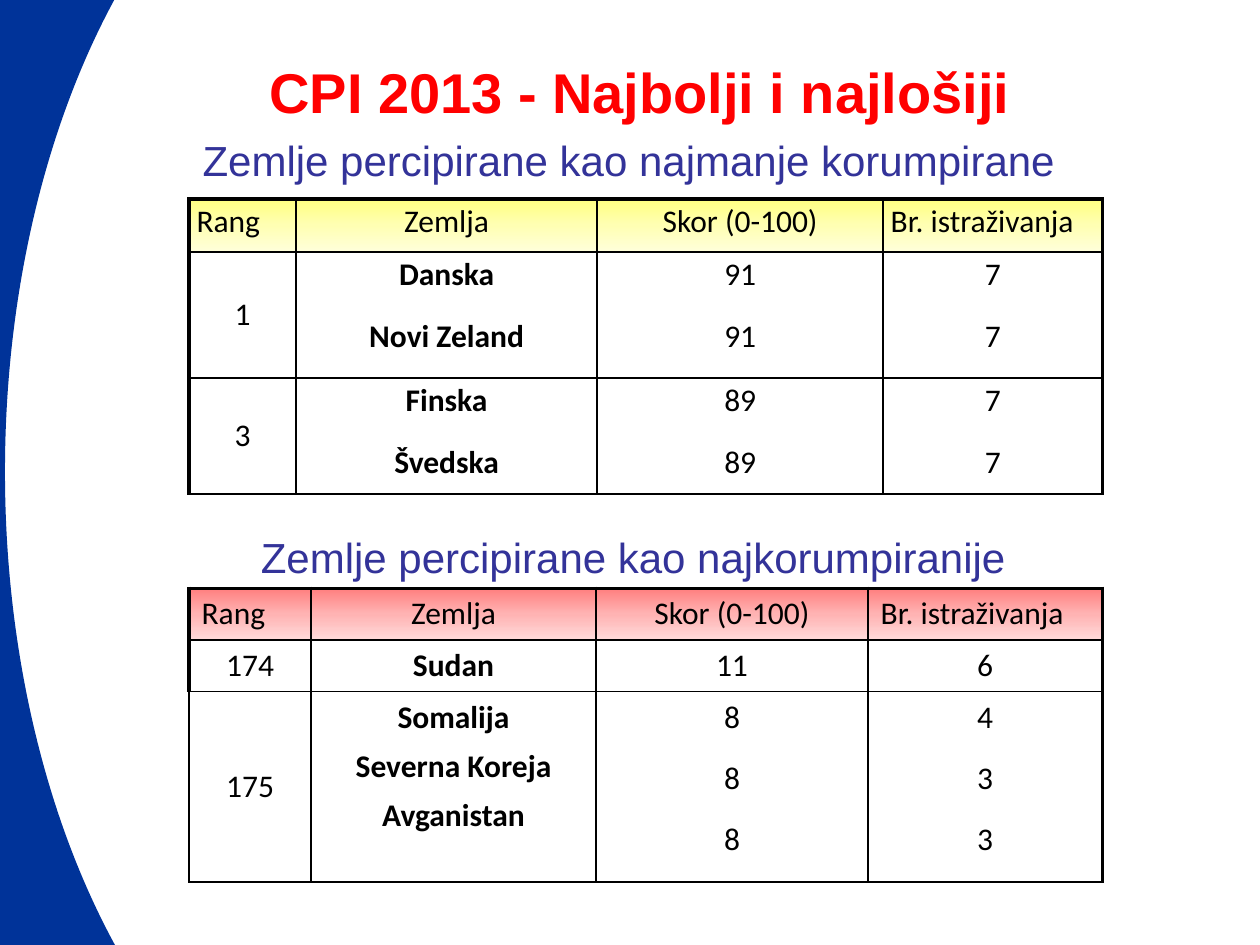
from copy import deepcopy
from dataclasses import dataclass

from pptx import Presentation
from pptx.dml.color import RGBColor
from pptx.enum.shapes import MSO_SHAPE
from pptx.enum.text import MSO_ANCHOR, PP_ALIGN
from pptx.oxml import parse_xml
from pptx.oxml.ns import nsdecls, qn
from pptx.util import Inches, Pt

MOON = MSO_SHAPE.MOON
LEFT, CENTER = PP_ALIGN.LEFT, PP_ALIGN.CENTER
TOP, MIDDLE = MSO_ANCHOR.TOP, MSO_ANCHOR.MIDDLE


@dataclass(frozen=True)
class Theme:
    """Colours, fonts and point sizes of the slide."""
    blue: str = "003399"
    title: str = "FF0000"
    heading: str = "333399"
    ink: str = "000000"
    paper: str = "FFFFFF"
    yellow: tuple = ("FFFF80", "FFFFB3", "FFFFDA")
    red: tuple = ("FF8080", "FFB3B3", "FFDADA")
    display_font: str = "Arial"
    table_font: str = "Calibri"
    title_size: int = 32
    heading_size: int = 24
    table_size: int = 18
    table_leading: int = 22
    table_gap: int = 13
    thick: float = 2.25
    thin: float = 1


THEME = Theme()
HEADER = ("Rang", "Zemlja", "Skor (0-100)", "Br. istraživanja")
BEST = (
    HEADER,
    ("1", "Danska\nNovi Zeland", "91\n91", "7\n7"),
    ("3", "Finska\nŠvedska", "89\n89", "7\n7"),
)
WORST = (
    HEADER,
    ("174", "Sudan", "11", "6"),
    ("175", "Somalija\nSeverna Koreja\nAvganistan", "8\n8\n8", "4\n3\n3"),
)


def style_font(font, family, size, color, bold=False):
    """Set family, size, colour and weight of a font."""
    font.name, font.size, font.bold = family, Pt(size), bold
    font.color.rgb = RGBColor.from_string(color)


def add_side_arc(slide, box):
    """Draw the blue crescent along the left edge."""
    arc = slide.shapes.add_shape(MOON, *map(Inches, box))
    arc.adjustments[0] = 0.513
    arc.shadow.inherit = False
    arc.fill.solid()
    arc.fill.fore_color.rgb = RGBColor.from_string(THEME.blue)
    arc.line.fill.background()


def add_heading(slide, box, wording, size, color, align=CENTER, anchor=TOP, bold=False):
    """Write one line of display text in the given box."""
    frame = slide.shapes.add_textbox(*map(Inches, box)).text_frame
    frame.word_wrap = True
    frame.vertical_anchor = anchor
    line = frame.paragraphs[0]
    line.text, line.alignment = wording, align
    style_font(line.font, THEME.display_font, size, color, bold)
    return line


def fill_gradient(cell, colors):
    """Fill a cell with evenly spaced colours running downwards."""
    cell.fill.gradient()
    cell.fill.gradient_angle = 270
    stop_list = cell._tc.tcPr.find(".//" + qn("a:gsLst"))
    for _ in colors[len(stop_list):]:
        stop_list.append(deepcopy(stop_list[0]))
    for index, (stop, color) in enumerate(zip(cell.fill.gradient_stops, colors)):
        stop.position = index / (len(colors) - 1)
        stop.color.rgb = RGBColor.from_string(color)


def set_borders(cell, thick_sides):
    """Draw four borders, the named sides thicker than the rest."""
    properties = cell._tc.get_or_add_tcPr()
    for index, side in enumerate("LRTB"):
        width = Pt(THEME.thick if side in thick_sides else THEME.thin)
        properties.insert(index, parse_xml(
            f'<a:ln{side} {nsdecls("a")} w="{width}"><a:solidFill>'
            f'<a:srgbClr val="{THEME.ink}"/></a:solidFill></a:ln{side}>'))


def write_cell(cell, wording, align, anchor, bold, gap, inset):
    """Write the lines of a cell with fixed leading."""
    cell.text, cell.vertical_anchor = wording, anchor
    cell.margin_left = cell.margin_right = Inches(inset)
    cell.margin_top = cell.margin_bottom = Inches(inset / 2)
    for line in cell.text_frame.paragraphs:
        line.alignment = align
        line.line_spacing, line.space_after = Pt(THEME.table_leading), Pt(gap)
        style_font(line.font, THEME.table_font, THEME.table_size, THEME.ink, bold)


def add_ranking(slide, box, rows, widths, heights, colors, inset, thick_left_rows):
    """Build a ranking table with a gradient header row."""
    last = len(widths) - 1
    table = slide.shapes.add_table(len(rows), len(widths), *map(Inches, box)).table
    table.first_row = table.horz_banding = False
    for column, width in zip(table.columns, widths):
        column.width = Inches(width)
    for r, (countries, height) in enumerate(zip(rows, heights)):
        table.rows[r].height = Inches(height)
        for c, wording in enumerate(countries):
            cell, header = table.cell(r, c), r == 0
            if header:
                fill_gradient(cell, colors)
            else:
                cell.fill.solid()
                cell.fill.fore_color.rgb = RGBColor.from_string(THEME.paper)
            thick_sides = (("T" if header else "") + ("R" if c == last else "")
                           + ("L" if c == 0 and r < thick_left_rows else ""))
            set_borders(cell, thick_sides)
            crowded = wording.count("\n") > 1 and c == 1
            write_cell(
                cell, wording,
                align=LEFT if header and c in (0, last) else CENTER,
                anchor=MIDDLE if c == 0 and not header else TOP,
                bold=c == 1 and not header,
                gap=6 if crowded else THEME.table_gap,
                inset=inset)


def main():
    """Build and save the slide."""
    deck = Presentation()
    deck.slide_width, deck.slide_height = Inches(10), Inches(7.5)
    slide = deck.slides.add_slide(deck.slide_layouts[6])
    add_side_arc(slide, (-1.33, -0.67, 2.67, 8.83))
    title = add_heading(slide, (0.83, 0.28, 8.5, 0.83), "CPI 2013 - Najbolji i najlošiji",
                        THEME.title_size, THEME.title, anchor=MIDDLE, bold=True)
    title.line_spacing = Pt(42)
    add_heading(slide, (1.64, 4.17, 6.77, 0.5), "Zemlje percipirane kao najkorumpiranije",
                THEME.heading_size, THEME.heading)
    add_heading(slide, (1.51, 1.02, 7.24, 0.47), "Zemlje percipirane kao najmanje korumpirane",
                THEME.heading_size, THEME.heading, align=LEFT)
    add_ranking(slide, (1.5, 4.67, 7.25, 2.33), WORST, (0.97, 2.26, 2.16, 1.86),
                (0.41, 0.41, 1.51), THEME.red, inset=0.1, thick_left_rows=2)
    add_ranking(slide, (1.5, 1.58, 7.25, 2.34), BEST, (0.85, 2.39, 2.27, 1.74),
                (0.42, 1, 0.92), THEME.yellow, inset=0.06, thick_left_rows=3)
    deck.save("out.pptx")


if __name__ == "__main__":
    main()
